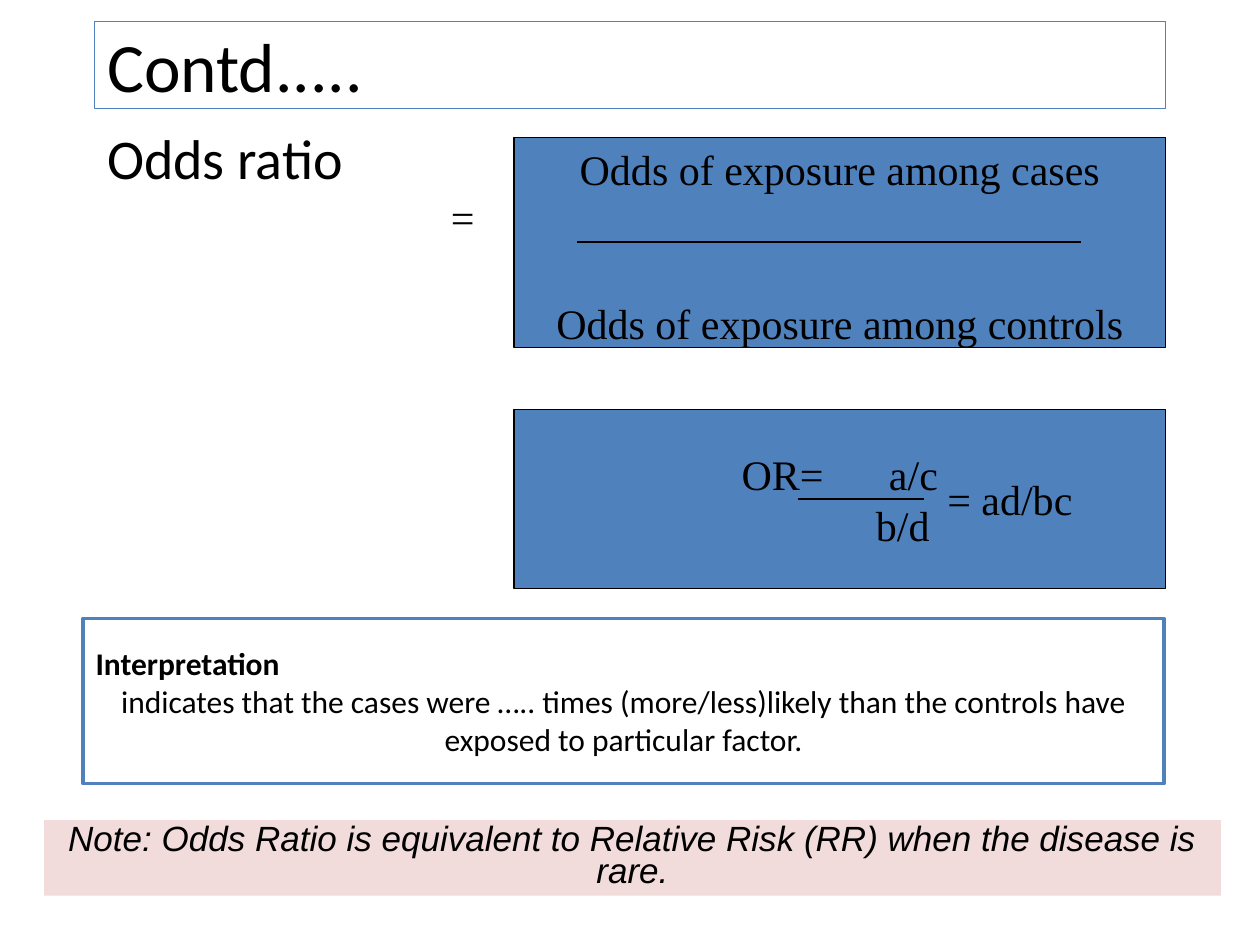
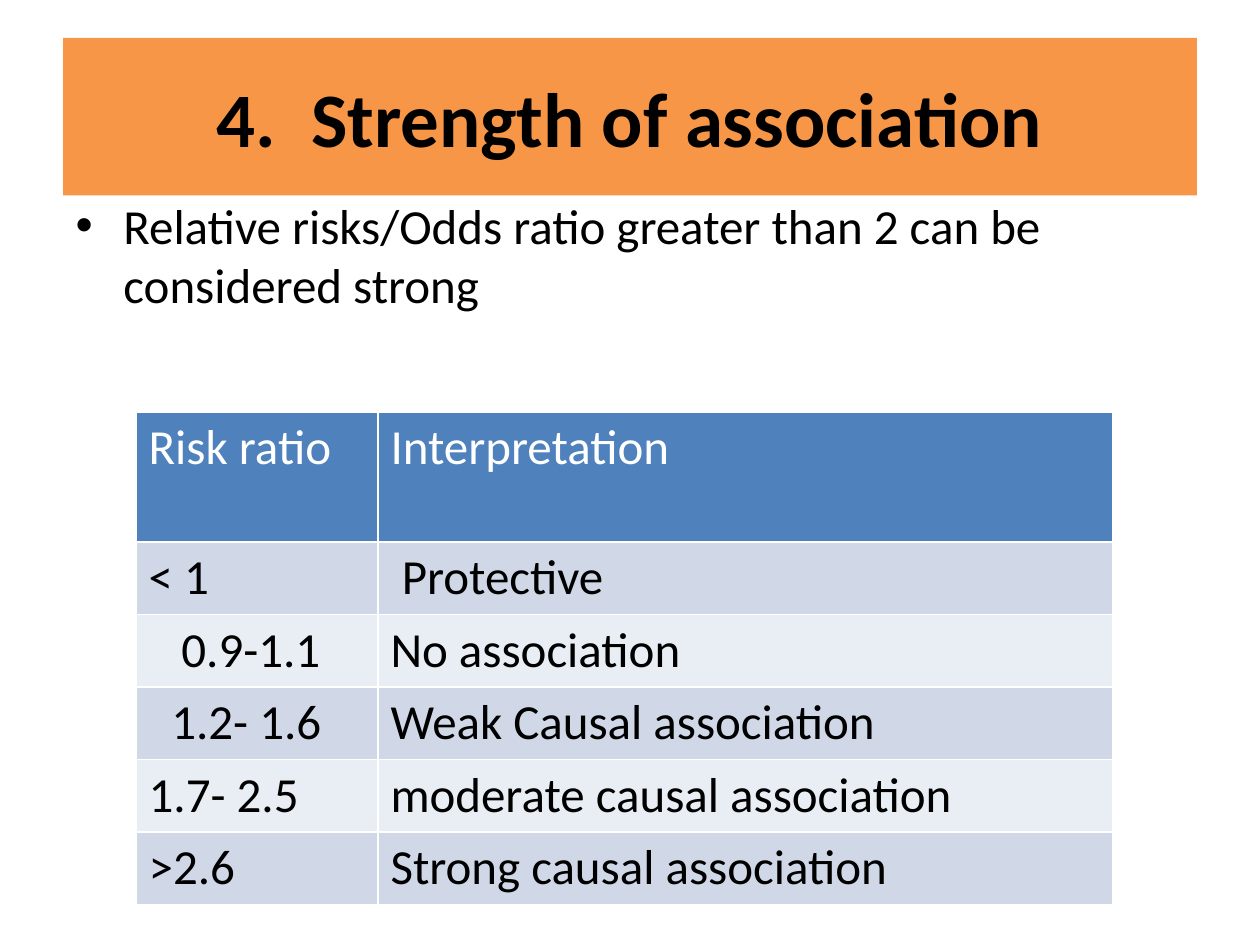
from dataclasses import dataclass
from typing import Optional

from lxml.etree import SubElement
from pptx import Presentation
from pptx.dml.color import RGBColor
from pptx.enum.shapes import MSO_CONNECTOR, MSO_SHAPE
from pptx.enum.text import MSO_ANCHOR, PP_ALIGN
from pptx.oxml.ns import qn
from pptx.util import Inches, Pt

BLUE, ORANGE, PINK = "4F81BD", "F79646", "F2DCDB"
BLACK, WHITE = "000000", "FFFFFF"
ROW_BANDS = ("D0D8E8", "E9EDF4")
BODY_FONT, FORMULA_FONT, NOTE_FONT = "Calibri", "Times New Roman", "Arial"
LEFT, CENTER = PP_ALIGN.LEFT, PP_ALIGN.CENTER
BULLET_INDENT = 0.38


@dataclass(frozen=True)
class Box:
    left: float
    top: float
    width: float
    height: float

    def lengths(self) -> tuple:
        return tuple(Inches(n) for n in (self.left, self.top, self.width, self.height))


@dataclass(frozen=True)
class Panel:
    box: Box
    fill: str
    line: Optional[str] = None
    line_width: float = 0.75
    anchor: MSO_ANCHOR = MSO_ANCHOR.MIDDLE
    wrap: bool = True


@dataclass(frozen=True)
class RiskBand:
    ratio: str
    meaning: str
    ratio_indent: float = 0
    meaning_indent: float = 0


RISK_BANDS = (
    RiskBand("< 1", "Protective", meaning_indent=0.09),
    RiskBand("0.9-1.1", "No association", ratio_indent=0.26),
    RiskBand("1.2- 1.6", "Weak Causal association", ratio_indent=0.18),
    RiskBand("1.7- 2.5", "moderate causal association"),
    RiskBand(">2.6", "Strong causal association"),
)


def rgb(color: str) -> RGBColor:
    return RGBColor.from_string(color)


def write(frame, text: str, *, size: float, font: str = BODY_FONT, color: str = BLACK,
          bold: bool = False, italic: bool = False, align=LEFT, before: float = 0,
          spacing: float = 1, tab: Optional[float] = None):
    first = frame.paragraphs[0]
    paragraph = frame.add_paragraph() if first.runs else first
    paragraph.alignment = align
    paragraph.space_before = Pt(before)
    paragraph.line_spacing = spacing
    if tab:
        stops = SubElement(paragraph._p.get_or_add_pPr(), qn("a:tabLst"))
        SubElement(stops, qn("a:tab"), pos=str(Inches(tab)), algn="l")
    run = paragraph.add_run()
    run.text = text
    run.font.name, run.font.size = font, Pt(size)
    run.font.bold, run.font.italic = bold, italic
    run.font.color.rgb = rgb(color)
    return paragraph


def set_bullet(paragraph, bullet: Optional[str]) -> None:
    properties = paragraph._p.get_or_add_pPr()
    indent = Inches(BULLET_INDENT) if bullet else 0
    properties.set("marL", str(indent))
    properties.set("indent", str(-indent))
    if bullet:
        SubElement(properties, qn("a:buChar"), char=bullet)
    else:
        SubElement(properties, qn("a:buNone"))


def place(shape, box: Box) -> None:
    shape.left, shape.top, shape.width, shape.height = box.lengths()


def add_heading(slide, text: str, box: Box, *, fill: Optional[str] = None,
                line: Optional[str] = None, **text_format) -> None:
    heading = slide.shapes.title
    place(heading, box)
    if fill:
        heading.fill.solid()
        heading.fill.fore_color.rgb = rgb(fill)
    if line:
        heading.line.color.rgb = rgb(line)
        heading.line.width = Pt(0.75)
    heading.text_frame.vertical_anchor = MSO_ANCHOR.MIDDLE
    write(heading.text_frame, text, **text_format)


def add_body(slide, text: str, box: Box, *, size: float, bullet: Optional[str] = None) -> None:
    body = slide.placeholders[1]
    place(body, box)
    set_bullet(write(body.text_frame, text, size=size, before=size * 0.2), bullet)


def add_panel(slide, panel: Panel):
    shape = slide.shapes.add_shape(MSO_SHAPE.RECTANGLE, *panel.box.lengths())
    shape.shadow.inherit = False
    shape.fill.solid()
    shape.fill.fore_color.rgb = rgb(panel.fill)
    if panel.line:
        shape.line.color.rgb = rgb(panel.line)
        shape.line.width = Pt(panel.line_width)
    else:
        shape.line.fill.background()
    shape.text_frame.word_wrap = panel.wrap
    shape.text_frame.vertical_anchor = panel.anchor
    return shape.text_frame


def add_formula_text(slide, text: str, box: Box) -> None:
    frame = slide.shapes.add_textbox(*box.lengths()).text_frame
    frame.word_wrap = False
    write(frame, text, size=24, font=FORMULA_FONT)


def add_fraction_bar(slide, left: float, right: float, y: float) -> None:
    bar = slide.shapes.add_connector(
        MSO_CONNECTOR.STRAIGHT, Inches(left), Inches(y), Inches(right), Inches(y))
    bar.line.color.rgb = rgb(BLACK)
    bar.line.width = Pt(0.75)
    SubElement(bar._element.spPr, qn("a:effectLst"))


def fill_cell(cell, text: str, *, fill: str, color: str = BLACK, indent: float = 0) -> None:
    properties = cell._tc.get_or_add_tcPr()
    for side in "LRTB":
        border = SubElement(properties, qn(f"a:ln{side}"), w=str(Pt(1)))
        SubElement(SubElement(border, qn("a:solidFill")), qn("a:srgbClr"), val=WHITE)
    cell.fill.solid()
    cell.fill.fore_color.rgb = rgb(fill)
    cell.margin_left = Inches(0.1 + indent)
    write(cell.text_frame, text, size=28, color=color)


def add_risk_table(slide, box: Box) -> None:
    table = slide.shapes.add_table(len(RISK_BANDS) + 1, 2, *box.lengths()).table
    for column, width in zip(table.columns, (1.92, 5.83)):
        column.width = Inches(width)
    for index, row in enumerate(table.rows):
        row.height = Inches(0.57 if index else 1.03)
    for column, label in enumerate(("Risk ratio", "Interpretation")):
        fill_cell(table.cell(0, column), label, fill=BLUE, color=WHITE)
    for index, band in enumerate(RISK_BANDS):
        fill = ROW_BANDS[index % 2]
        fill_cell(table.cell(index + 1, 0), band.ratio, fill=fill, indent=band.ratio_indent)
        fill_cell(table.cell(index + 1, 1), band.meaning, fill=fill, indent=band.meaning_indent)


def build_odds_ratio(slide) -> None:
    formula = dict(size=24, font=FORMULA_FONT, align=CENTER)
    add_heading(slide, "Contd.....", Box(0.75, 0.17, 8.5, 0.69), line=BLUE, size=39.6)
    add_body(slide, "Odds ratio", Box(0.75, 0.93, 8.5, 4.5), size=32)

    definition = add_panel(slide, Panel(
        Box(4.08, 1.09, 5.17, 1.67), BLUE, BLACK, anchor=MSO_ANCHOR.TOP, wrap=False))
    write(definition, "Odds of exposure among cases", **formula)
    write(definition, "Odds of exposure among controls", before=59, **formula)
    add_fraction_bar(slide, 4.58, 8.58, 1.92)
    add_formula_text(slide, "=", Box(3.48, 1.47, 0.47, 0.5))

    cross_product = add_panel(slide, Panel(
        Box(4.08, 3.25, 5.17, 1.42), BLUE, BLACK, wrap=False))
    write(cross_product, "OR=\ta/c", tab=1.17, **formula)
    write(cross_product, "\tb/d", tab=1, **formula)
    add_fraction_bar(slide, 6.33, 7.33, 3.96)
    add_formula_text(slide, "= ad/bc", Box(7.42, 3.71, 1.19, 0.5))

    interpretation = add_panel(slide, Panel(
        Box(0.66, 4.91, 8.58, 1.31), WHITE, BLUE, line_width=2))
    write(interpretation, "Interpretation", size=18, bold=True)
    write(interpretation, "indicates that the cases were ….. times (more/less)likely than "
          "the controls have exposed to particular factor.", size=18, align=CENTER)

    note = add_panel(slide, Panel(Box(0.35, 6.51, 9.34, 0.6), PINK, anchor=MSO_ANCHOR.TOP))
    write(note, "Note: Odds Ratio is equivalent to Relative Risk (RR) when the disease is rare.",
          size=20, font=NOTE_FONT, italic=True, align=CENTER, spacing=0.75)


def build_strength(slide) -> None:
    add_heading(slide, "4.  Strength of association", Box(0.5, 0.3, 9, 1.25),
                fill=ORANGE, size=44, bold=True, align=CENTER)
    add_body(slide, "Relative risks/Odds ratio greater than 2 can be considered strong",
             Box(0.5, 1.5, 9, 1.25), size=28, bullet="•")
    add_risk_table(slide, Box(1.08, 3.27, 7.75, 3.88))


def main() -> None:
    deck = Presentation()
    deck.slide_width, deck.slide_height = Inches(10), Inches(7.5)
    for build in (build_odds_ratio, build_strength):
        build(deck.slides.add_slide(deck.slide_layouts[1]))
    deck.save("out.pptx")


if __name__ == "__main__":
    main()
